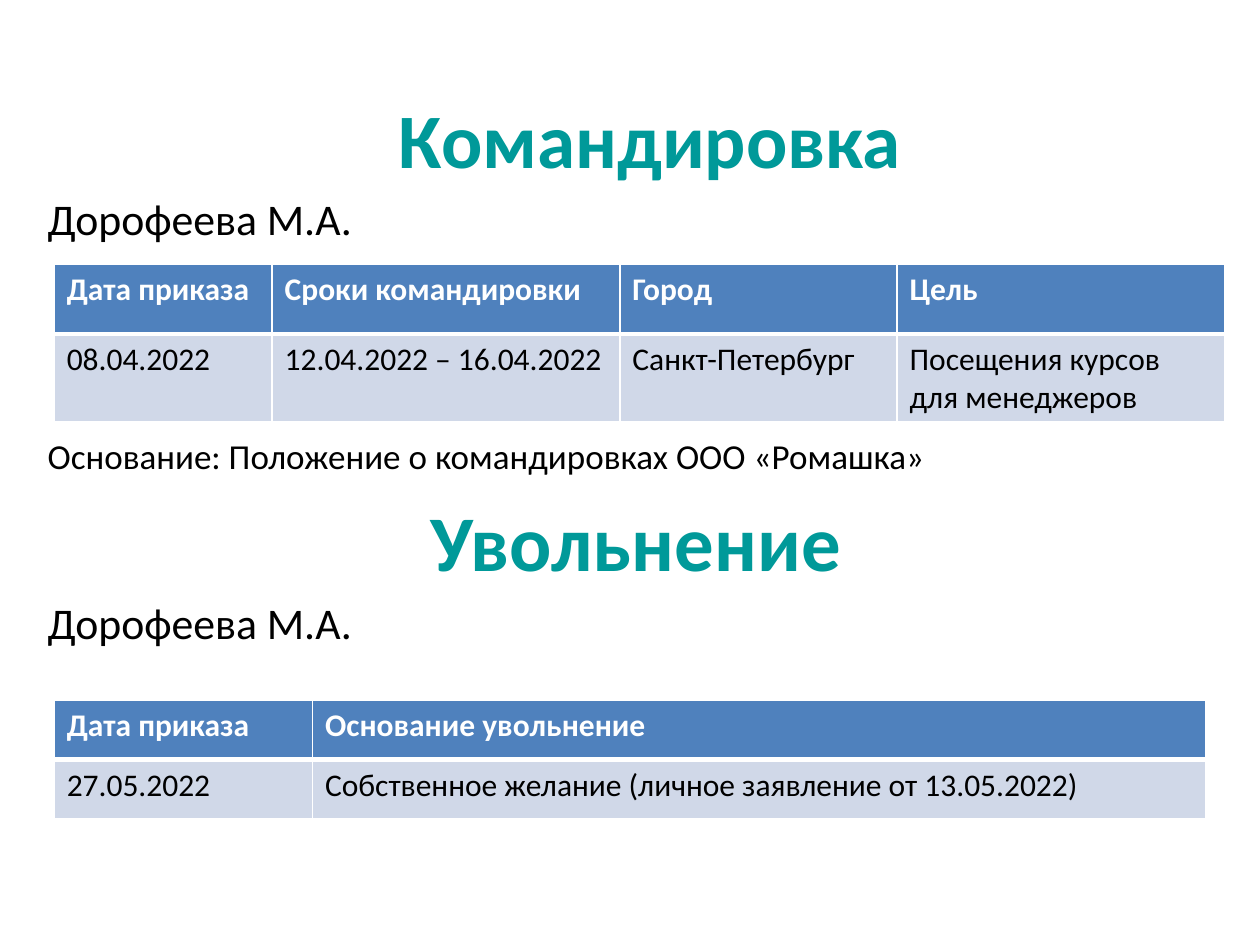
"""Build a slide with a business trip table and a dismissal table."""
import dataclasses

import pptx
import pptx.dml.color
import pptx.enum.text
import pptx.oxml
import pptx.oxml.ns
import pptx.util


@dataclasses.dataclass(frozen=True)
class Theme:
    font: str = "Calibri"
    accent: str = "009999"
    ink: str = "000000"
    paper: str = "FFFFFF"
    header: str = "4F81BD"
    band: str = "D0D8E8"
    title: int = 44
    subtitle: int = 45
    name: int = 25
    note: int = 20
    cell: int = 18


theme = Theme()
align = pptx.enum.text.PP_ALIGN
deck = pptx.Presentation()
deck.slide_width = pptx.util.Inches(10)
deck.slide_height = pptx.util.Inches(7.5)
column = deck.slide_width / 100
row = deck.slide_height / 75
page = deck.slides.add_slide(deck.slide_layouts[6])


def add_span(para, text, size, color, bold):
    span = para.add_run()
    span.text = text
    span.font.name = theme.font
    span.font.size = pptx.util.Pt(size)
    span.font.bold = bold
    span.font.color.rgb = pptx.dml.color.RGBColor.from_string(color)


def add_border(cell, side, points):
    namespace = pptx.oxml.ns.nsdecls("a")
    line = pptx.oxml.parse_xml(
        f'<a:{side} {namespace} w="{pptx.util.Pt(points)}"><a:solidFill>'
        f'<a:srgbClr val="{theme.paper}"/></a:solidFill></a:{side}>'
    )
    cell._tc.get_or_add_tcPr().append(line)


# text, size, colour, bold, alignment, space before in points
title = [("Командировка", theme.title, theme.accent, True, align.CENTER, 0)]
body = [
    ("Дорофеева М.А.", theme.name, theme.ink, False, align.JUSTIFY, 0),
    ("Основание: Положение о командировках ООО «Ромашка»",
     theme.note, theme.ink, False, align.JUSTIFY, 109),
    ("Увольнение", theme.subtitle, theme.accent, True, align.CENTER, 9),
    ("Дорофеева М.А.", theme.name, theme.ink, False, align.JUSTIFY, 5),
]
anchors = pptx.enum.text.MSO_ANCHOR
texts = [
    ((9.1, 2.9, 85, 16.1), anchors.MIDDLE, title),
    ((2.8, 14.7, 95.3, 57.5), anchors.TOP, body),
]
for (left, top, width, height), anchor, lines in texts:
    box = page.shapes.add_textbox(
        int(left * column), int(top * row), int(width * column), int(height * row))
    frame = box.text_frame
    frame.word_wrap = True
    frame.vertical_anchor = anchor
    for index, (text, size, color, bold, alignment, before) in enumerate(lines):
        para = frame.add_paragraph() if index else frame.paragraphs[0]
        para.alignment = alignment
        para.space_before = pptx.util.Pt(before)
        add_span(para, text, size, color, bold)

# top, row height, column widths, rows of text
tables = [
    (21, 5.5, (17.3, 27.6, 22, 26), [
        ("Дата приказа", "Сроки командировки", "Город", "Цель"),
        ("08.04.2022", "12.04.2022 – 16.04.2022", "Санкт-Петербург",
         "Посещения курсов для менеджеров"),
    ]),
    (55.6, 4.7, (20.5, 70.9), [
        ("Дата приказа", "Основание увольнение"),
        ("27.05.2022", "Собственное желание (личное заявление от 13.05.2022)"),
    ]),
]
for top, row_height, widths, records in tables:
    table = page.shapes.add_table(
        len(records), len(widths), int(4.3 * column), int(top * row),
        int(sum(widths) * column), int(len(records) * row_height * row)).table
    for table_column, width in zip(table.columns, widths):
        table_column.width = int(width * column)
    for row_index, record in enumerate(records):
        is_header = row_index == 0
        for column_index, text in enumerate(record):
            cell = table.cell(row_index, column_index)
            for side, points in (("lnL", 1), ("lnR", 1),
                                 ("lnT", 1 if is_header else 3),
                                 ("lnB", 3 if is_header else 1)):
                add_border(cell, side, points)
            cell.fill.solid()
            cell.fill.fore_color.rgb = pptx.dml.color.RGBColor.from_string(
                theme.header if is_header else theme.band)
            add_span(cell.text_frame.paragraphs[0], text, theme.cell,
                     theme.paper if is_header else theme.ink, is_header)

deck.save("out.pptx")
